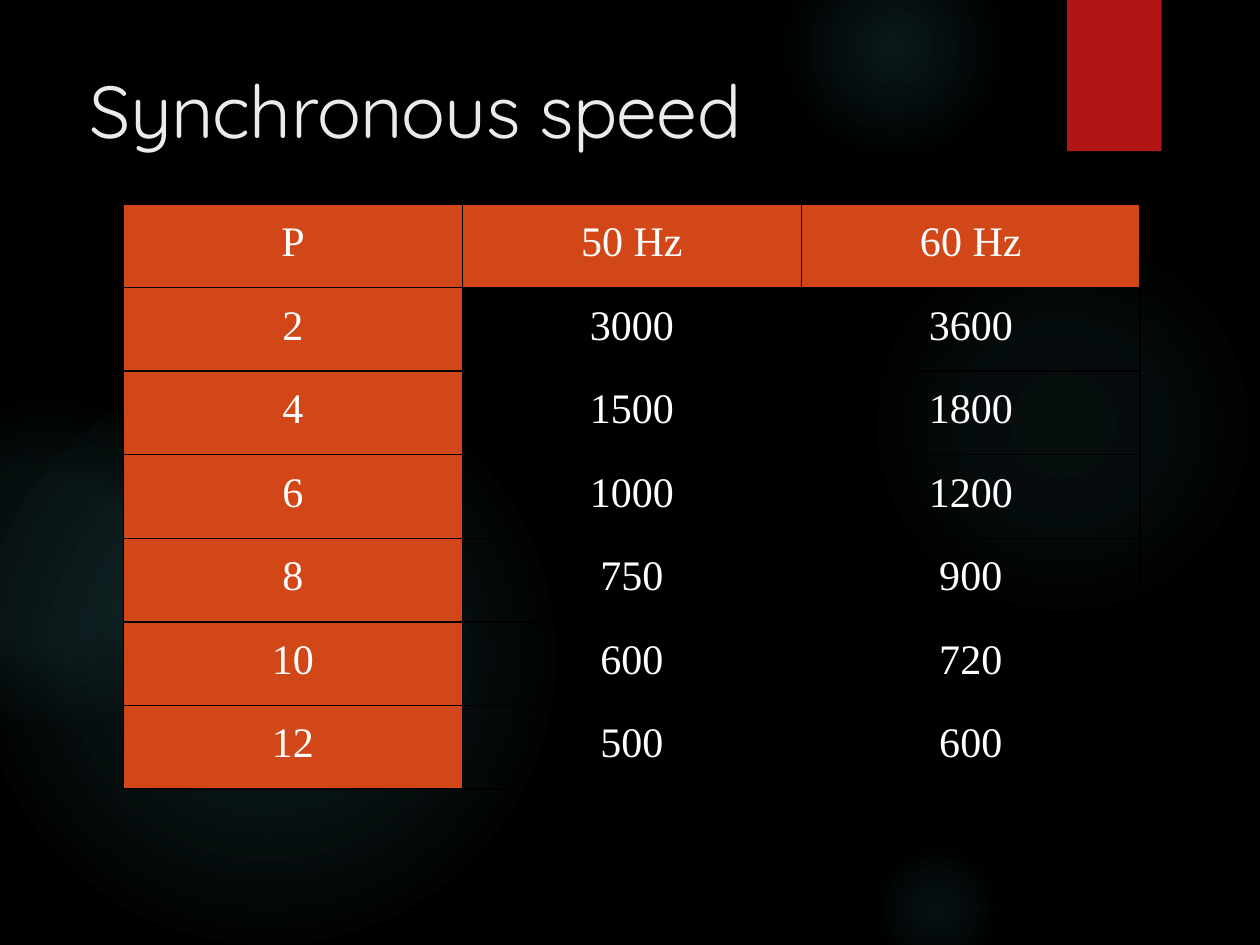
from typing import NamedTuple

from lxml.etree import SubElement
from pptx import Presentation
from pptx.dml.color import RGBColor
from pptx.enum.shapes import MSO_SHAPE
from pptx.enum.text import MSO_ANCHOR, PP_ALIGN
from pptx.oxml import parse_xml
from pptx.oxml.ns import nsdecls, qn
from pptx.util import Inches, Pt

COLORS = {"back": "000000", "glow": "50B9C1", "tab": "B01513", "title": "EBEBEB",
          "head": "D24717", "text": "FFFFFF", "border": "000000"}
TITLE_FONT = {"name": "Quicksand", "size": Pt(42), "bold": False}
CELL_FONT = {"name": "Times New Roman", "size": Pt(24), "bold": False}


class Glow(NamedTuple):
    left: float
    top: float
    size: float
    stops: tuple  # (position %, opacity %)


GLOWS = [
    Glow(6.89, 1.83, 3.08, ((0, 7), (36, 6), (69, 0))),
    Glow(6.22, -0.5, 1.75, ((0, 14), (36, 7), (73, 0))),
    Glow(6.89, 6.67, 1.08, ((0, 9), (36, 5), (66, 0))),
    Glow(-0.17, 2.92, 4.58, ((0, 11), (36, 10), (75, 0))),
    Glow(-0.92, 3.17, 2.58, ((0, 8), (36, 8), (72, 0))),
]
SPEEDS = [
    ("P", "50 Hz", "60 Hz"),
    ("2", "3000", "3600"),
    ("4", "1500", "1800"),
    ("6", "1000", "1200"),
    ("8", "750", "900"),
    ("10", "600", "720"),
    ("12", "500", "600"),
]
COL_W, ROW_H = 2.69, 0.663


def rgb(name: str) -> RGBColor:
    return RGBColor.from_string(COLORS[name])


def set_font(font, formats: dict, color: str) -> None:
    for key, value in formats.items():
        setattr(font, key, value)
    font.color.rgb = rgb(color)


def set_margins(frame, top: float) -> None:
    """Zero insets on a text frame or table cell, except at the top."""
    for side in ("left", "right", "bottom"):
        setattr(frame, f"margin_{side}", 0)
    frame.margin_top = Inches(top)


def add_plain_shape(s, kind, left: float, top: float, width: float, height: float):
    sp = s.shapes.add_shape(kind, Inches(left), Inches(top), Inches(width), Inches(height))
    sp.shadow.inherit = False
    sp.line.fill.background()
    return sp


def add_glow(s, glow: Glow) -> None:
    """Circle with a radial gradient that fades to transparent."""
    sp = add_plain_shape(s, MSO_SHAPE.OVAL, glow.left, glow.top, glow.size, glow.size)
    stops = "".join(
        f'<a:gs pos="{pos * 1000}"><a:srgbClr val="{COLORS["glow"]}">'
        f'<a:alpha val="{alpha * 1000}"/></a:srgbClr></a:gs>'
        for pos, alpha in glow.stops)
    grad = parse_xml(
        f'<a:gradFill {nsdecls("a")} rotWithShape="1"><a:gsLst>{stops}</a:gsLst>'
        '<a:path path="circle"><a:fillToRect l="50000" t="50000" r="50000" b="50000"/>'
        '</a:path></a:gradFill>')
    sp._element.spPr.find(qn("a:prstGeom")).addnext(grad)


def add_title(s, text: str) -> None:
    title = s.shapes.title
    title.left, title.top = Inches(0.71), Inches(0.51)
    title.width, title.height = Inches(6.29), Inches(0.72)
    s.shapes._spTree.append(title._element)  # above the glows
    tf = title.text_frame
    tf.text = text
    tf.vertical_anchor = MSO_ANCHOR.TOP
    set_margins(tf, 0.01)
    p = tf.paragraphs[0]
    p.alignment = PP_ALIGN.LEFT
    r = p.runs[0]
    set_font(r.font, TITLE_FONT, "title")
    r._r.get_or_add_rPr().set("spc", "-40")


def add_borders(cell) -> None:
    tcPr = cell._tc.get_or_add_tcPr()
    for side in ("lnL", "lnR", "lnT", "lnB"):
        ln = SubElement(tcPr, qn(f"a:{side}"), w=str(Pt(1)))
        fill = SubElement(ln, qn("a:solidFill"))
        SubElement(fill, qn("a:srgbClr"), val=COLORS["border"])


def fill_cell(cell, text: str, is_header: bool) -> None:
    add_borders(cell)
    if is_header:
        cell.fill.solid()
        cell.fill.fore_color.rgb = rgb("head")
    else:
        cell.fill.background()
    set_margins(cell, 0.12)
    cell.text = text
    p = cell.text_frame.paragraphs[0]
    p.alignment = PP_ALIGN.CENTER
    set_font(p.runs[0].font, CELL_FONT, "text")


def add_speed_table(s) -> None:
    rows, cols = len(SPEEDS), len(SPEEDS[0])
    table = s.shapes.add_table(rows, cols, Inches(0.98), Inches(1.62),
                               Inches(cols * COL_W), Inches(rows * ROW_H)).table
    table.horz_banding = False
    for column in table.columns:
        column.width = Inches(COL_W)
    for i, values in enumerate(SPEEDS):
        table.rows[i].height = Inches(ROW_H)
        for j, value in enumerate(values):
            fill_cell(table.cell(i, j), value, i == 0 or j == 0)


def main() -> None:
    prs = Presentation()
    prs.slide_width, prs.slide_height = Inches(10), Inches(7.5)
    s = prs.slides.add_slide(prs.slide_layouts[5])
    s.background.fill.solid()
    s.background.fill.fore_color.rgb = rgb("back")
    for glow in GLOWS:
        add_glow(s, glow)
    tab = add_plain_shape(s, MSO_SHAPE.RECTANGLE, 8.47, 0, 0.75, 1.2)
    tab.fill.solid()
    tab.fill.fore_color.rgb = rgb("tab")
    add_title(s, "Synchronous speed")
    add_speed_table(s)
    prs.save("out.pptx")


if __name__ == "__main__":
    main()
